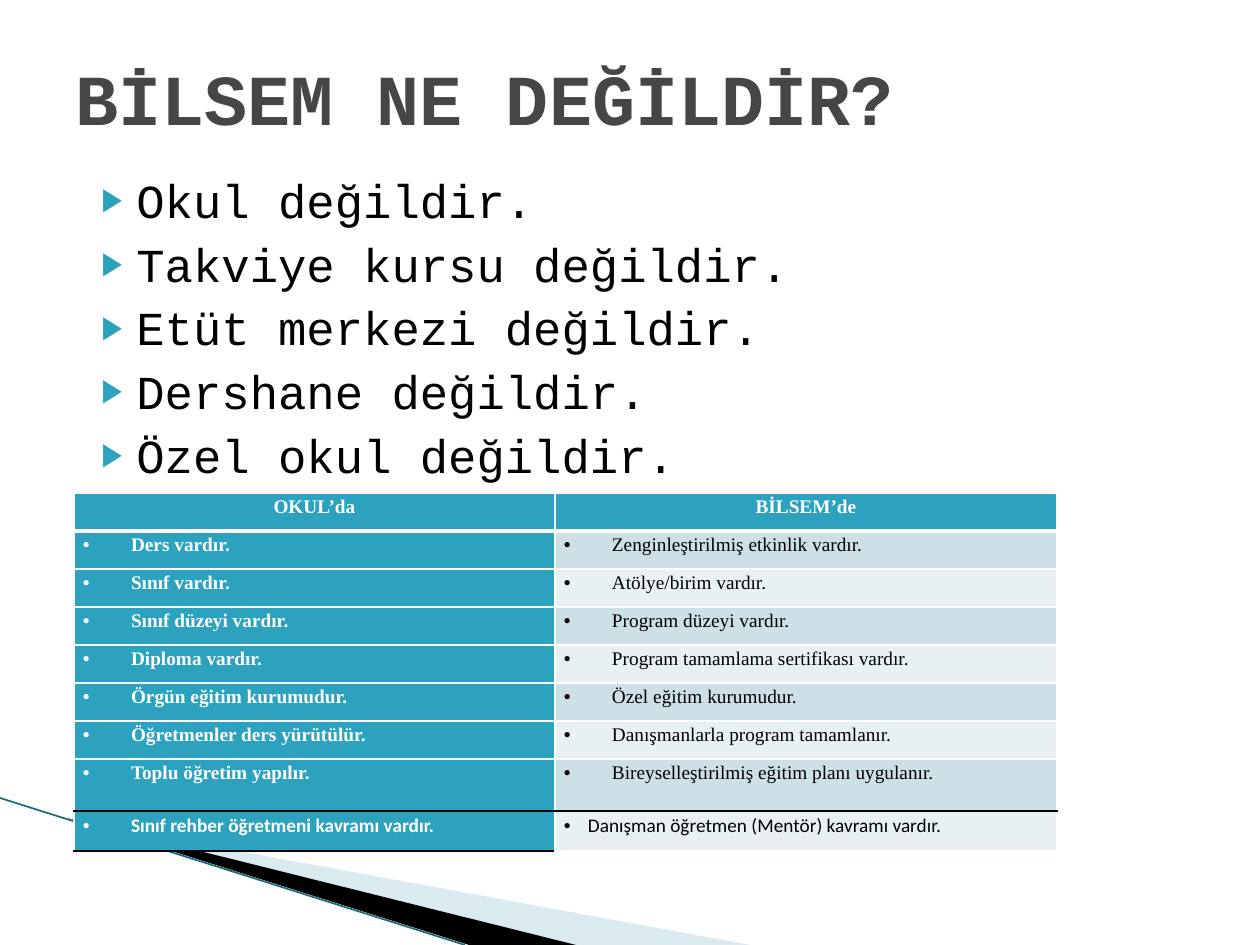
from lxml.etree import SubElement
from pptx import Presentation
from pptx.dml.color import RGBColor
from pptx.enum.shapes import MSO_CONNECTOR as Conn
from pptx.enum.text import MSO_ANCHOR as Anchor, PP_ALIGN as Align
from pptx.oxml.ns import qn
from pptx.util import Pt

SCALE = 914400 / 126
TEAL, WHITE, BLACK = "2DA2BF", "FFFFFF", "000000"
BANDS = ("CDE0E8", "E8F0F4")
MONO, SERIF, SANS = "Courier New", "Times New Roman", "Calibri"

ITEMS = ["Okul değildir.", "Takviye kursu değildir.", "Etüt merkezi değildir.",
         "Dershane değildir.", "Özel okul değildir."]
ROWS = [
    ("OKUL’da", "BİLSEM’de"),
    ("Ders vardır.", "Zenginleştirilmiş etkinlik vardır."),
    ("Sınıf vardır.", "Atölye/birim vardır."),
    ("Sınıf düzeyi vardır.", "Program düzeyi vardır."),
    ("Diploma vardır.", "Program tamamlama sertifikası vardır."),
    ("Örgün eğitim kurumudur.", "Özel eğitim kurumudur."),
    ("Öğretmenler ders yürütülür.", "Danışmanlarla program tamamlanır."),
    ("Toplu öğretim yapılır.", "Bireyselleştirilmiş eğitim planı uygulanır."),
    ("Sınıf rehber öğretmeni kavramı vardır.",
     "Danışman öğretmen (Mentör) kavramı vardır."),
]
WIDTHS = (481, 502)
HEIGHTS = [38] * 7 + [52, 40]


def px(n):
    return round(n * SCALE)


def rgb(code):
    return RGBColor.from_string(code)


def add_run(para, text, font, size, color, bold=False):
    run = para.add_run()
    run.text = text
    run.font.name, run.font.size, run.font.bold = font, Pt(size), bold
    run.font.color.rgb = rgb(color)


def add_bullet(para, char, indent, hang, color=None, size=None):
    props = para._p.get_or_add_pPr()
    props.set("marL", str(px(indent)))
    props.set("indent", str(-px(hang)))
    if color:
        SubElement(SubElement(props, qn("a:buClr")), qn("a:srgbClr"), val=color)
    if size:
        SubElement(props, qn("a:buSzPct"), val=str(size * 1000))
    SubElement(props, qn("a:buFont"), typeface="Arial")
    SubElement(props, qn("a:buChar"), char=char)


def add_wedge(slide, points, color, alpha=None):
    pen = slide.shapes.build_freeform(*points[0], scale=SCALE)
    pen.add_line_segments(points[1:])
    wedge = pen.convert_to_shape()
    wedge.shadow.inherit = False
    wedge.fill.solid()
    wedge.fill.fore_color.rgb = rgb(color)
    wedge.line.fill.background()
    if alpha:
        tone = wedge.fill._xPr.find(".//" + qn("a:srgbClr"))
        SubElement(tone, qn("a:alpha"), val=str(alpha * 1000))


def add_corner(slide, left, top):
    """Draw the two wedges and the thin line at the lower left."""
    def place(*points):
        return [(left + x, top + y) for x, y in points]

    add_wedge(slide, place((69, 22), (750, 147), (575, 147)), "A0CBDC", 40)
    add_wedge(slide, place((67, 20), (576, 147), (469, 147)), BLACK)
    (x1, y1), (x2, y2) = place((0, 0), (465, 147))
    line = slide.shapes.add_connector(Conn.STRAIGHT, px(x1), px(y1), px(x2), px(y2))
    line.line.color.rgb = rgb("176B7F")
    line.line.width = Pt(0.95)
    SubElement(line._element.spPr, qn("a:effectLst"))


def add_title(slide, left, top, width, height):
    title = slide.shapes.title
    title.left, title.top = px(left), px(top)
    title.width, title.height = px(width), px(height)
    frame = title.text_frame
    frame.vertical_anchor = Anchor.MIDDLE
    para = frame.paragraphs[0]
    para.alignment = Align.LEFT
    add_run(para, "BİLSEM NE DEĞİLDİR?", MONO, 41, "464646", True)


def add_list(slide, left, top, width, height):
    box = slide.shapes.add_textbox(px(left), px(top), px(width), px(height))
    frame = box.text_frame
    frame.word_wrap = True
    for i, item in enumerate(ITEMS):
        para = frame.add_paragraph() if i else frame.paragraphs[0]
        if i:
            para.space_before = Pt(4)
        add_bullet(para, "▶", 50, 35, TEAL, 68)
        add_run(para, item, MONO, 27, BLACK)


def set_border(cell, side, color, width):
    edge = SubElement(cell._tc.get_or_add_tcPr(), qn("a:ln" + side),
                      w=str(Pt(width)))
    SubElement(SubElement(edge, qn("a:solidFill")), qn("a:srgbClr"), val=color)


def fill_cell(cell, r, c, text):
    head, last = r == 0, r == len(ROWS) - 1
    strong = head or c == 0
    top = (BLACK, 1) if last else (WHITE, 3 if r == 1 else 1)
    dark = r == len(ROWS) - 2 or (last and c == 0)
    bottom = (BLACK if dark else WHITE, 3 if head else 1)
    for side, (color, width) in zip("LRTB", ((WHITE, 1), (WHITE, 1), top, bottom)):
        set_border(cell, side, color, width)
    cell.fill.solid()
    cell.fill.fore_color.rgb = rgb(TEAL if strong else BANDS[(r - 1) % 2])
    cell.margin_left = cell.margin_right = px(9)
    cell.margin_top = cell.margin_bottom = 0
    para = cell.text_frame.paragraphs[0]
    para.alignment = Align.CENTER if head else Align.JUSTIFY
    para.line_spacing = 1.15
    if not head:
        step = 24 if last and c else 48
        add_bullet(para, "•", step, step)
    add_run(para, text, SANS if last else SERIF, 11,
            WHITE if strong else BLACK, strong)


def add_grid(slide, left, top):
    grid = slide.shapes.add_table(len(ROWS), len(WIDTHS), px(left), px(top),
                                  px(sum(WIDTHS)), px(sum(HEIGHTS))).table
    for c, width in enumerate(WIDTHS):
        grid.columns[c].width = px(width)
    for r, (height, texts) in enumerate(zip(HEIGHTS, ROWS)):
        grid.rows[r].height = px(height)
        for c, text in enumerate(texts):
            fill_cell(grid.cell(r, c), r, c, text)


def main():
    deck = Presentation()
    deck.slide_width, deck.slide_height = px(1260), px(945)
    slide = deck.slides.add_slide(deck.slide_layouts[5])
    add_corner(slide, 0, 798)
    add_title(slide, 63, 38, 1029, 117)
    add_list(slide, 74, 165, 1029, 672)
    add_grid(slide, 74, 493)
    deck.save("out.pptx")


if __name__ == "__main__":
    main()
